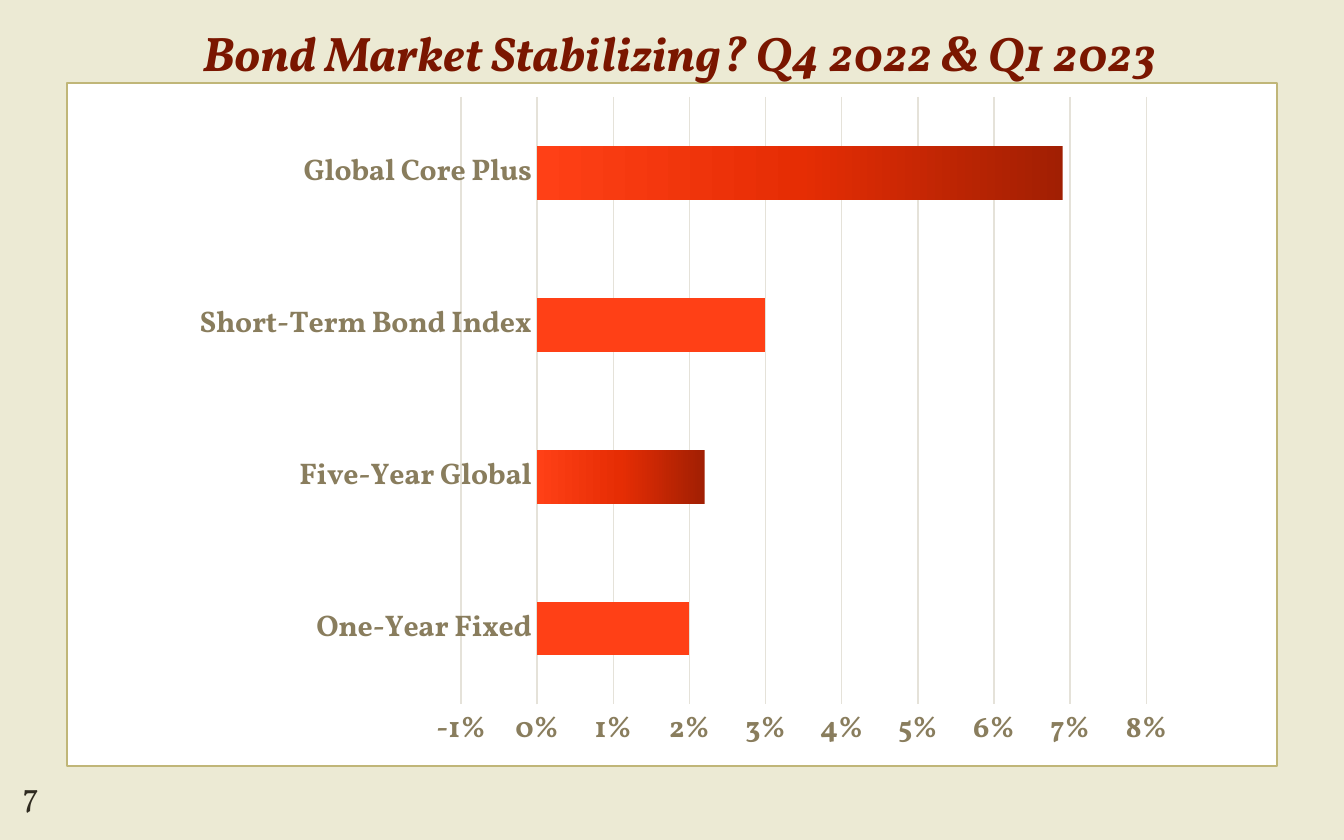
import pptx
import pptx.chart.data
import pptx.dml.color
import pptx.enum.chart
import pptx.enum.shapes
import pptx.enum.text
import pptx.oxml
import pptx.oxml.ns
import pptx.util
from pptx.util import Inches

FONT = "Vollkorn"
COLORS = {
    "background": "ECEAD4", "panel": "FFFFFF", "border": "C0B678",
    "title": "7A1600", "text": "2F2B20", "label": "897D5D", "grid": "E5E2D9",
    "bar": "FF4016", "bar_mid": "E62D04", "bar_dark": "A11F03",
}
RETURNS = {
    "One-Year Fixed": 0.02,
    "Five-Year Global": 0.022,
    "Short-Term Bond Index": 0.03,
    "Global Core Plus": 0.069,
}
GRADIENT_BARS = (1, 3)
GRADIENT = ((0, "bar_dark"), (50, "bar_mid"), (100, "bar"))
PLOT_AREA = {"x": 0.28, "y": 0.02, "w": 0.68, "h": 0.89}


def rgb(name):
    return pptx.dml.color.RGBColor.from_string(COLORS[name])


def set_attrs(obj, values):
    for name, value in values.items():
        setattr(obj, name, value)


def set_font(font, size, color, **style):
    set_attrs(font, {"name": FONT, "size": pptx.util.Pt(size), **style})
    font.color.rgb = rgb(color)


def set_line(line, color, width):
    line.color.rgb = rgb(color)
    line.width = pptx.util.Pt(width)


def add_panel(s):
    sp = s.shapes.add_shape(pptx.enum.shapes.MSO_SHAPE.RECTANGLE,
                            Inches(0.5), Inches(0.62), Inches(9), Inches(5.08))
    sp.shadow.inherit = False
    sp.fill.solid()
    sp.fill.fore_color.rgb = rgb("panel")
    set_line(sp.line, "border", 1)


def add_text(s, box, text, size, color, **style):
    tf = s.shapes.add_textbox(*map(Inches, box)).text_frame
    tf.word_wrap = True
    p = tf.paragraphs[0]
    r = p.add_run()
    r.text = text
    set_font(r.font, size, color, **style)
    return p


def set_plot_area(chart):
    """Fix the inner plot area as fractions of the chart."""
    area = chart.element.xpath("c:chart/c:plotArea")[0]
    for old in area.xpath("c:layout"):
        area.remove(old)
    places = "".join(f'<c:{k} val="{v}"/>' for k, v in PLOT_AREA.items())
    area.insert(0, pptx.oxml.parse_xml(
        f'<c:layout {pptx.oxml.ns.nsdecls("c")}><c:manualLayout>'
        '<c:layoutTarget val="inner"/><c:xMode val="edge"/><c:yMode val="edge"/>'
        f'{places}</c:manualLayout></c:layout>'))


def format_axes(chart):
    none = pptx.enum.chart.XL_TICK_MARK.NONE
    for axis in (chart.category_axis, chart.value_axis):
        set_attrs(axis, {"major_tick_mark": none, "minor_tick_mark": none})
        set_font(axis.tick_labels.font, 16, "label", bold=True)
    set_line(chart.category_axis.format.line, "grid", 0.75)

    axis = chart.value_axis
    set_attrs(axis, {"minimum_scale": -0.01, "maximum_scale": 0.08,
                     "major_unit": 0.01, "has_major_gridlines": True})
    set_attrs(axis.tick_labels, {"number_format": "0%",
                                 "number_format_is_linked": False})
    axis.format.line.fill.background()
    set_line(axis.major_gridlines.format.line, "grid", 0.75)


def color_bars(chart):
    series = chart.plots[0].series[0]
    series.invert_if_negative = False
    series.format.fill.solid()
    series.format.fill.fore_color.rgb = rgb("title")
    for i in range(len(RETURNS)):
        fill = series.points[i].format.fill
        if i in GRADIENT_BARS:
            fill.gradient()
            fill.gradient_angle = 180
        else:
            fill.solid()
            fill.fore_color.rgb = rgb("bar")
    stops = "".join(f'<a:gs pos="{pos * 1000}"><a:srgbClr val="{COLORS[c]}"/></a:gs>'
                    for pos, c in GRADIENT)
    for old in chart.element.xpath(".//a:gsLst"):
        old.getparent().replace(old, pptx.oxml.parse_xml(
            f'<a:gsLst {pptx.oxml.ns.nsdecls("a")}>{stops}</a:gsLst>'))


def add_returns_chart(s):
    data = pptx.chart.data.CategoryChartData(number_format="0.0%")
    data.categories = list(RETURNS)
    data.add_series("Series 1", list(RETURNS.values()))
    chart = s.shapes.add_chart(pptx.enum.chart.XL_CHART_TYPE.BAR_CLUSTERED,
                               Inches(1.33), Inches(0.62), Inches(7.5), Inches(5.08),
                               data).chart
    set_attrs(chart, {"has_title": False, "has_legend": False})
    set_font(chart.font, 10, "text")
    set_attrs(chart.plots[0], {"gap_width": 182, "vary_by_categories": False})
    set_plot_area(chart)
    format_axes(chart)
    color_bars(chart)


def main():
    prs = pptx.Presentation()
    set_attrs(prs, {"slide_width": Inches(10), "slide_height": Inches(6.25)})
    s = prs.slides.add_slide(prs.slide_layouts[6])
    s.background.fill.solid()
    s.background.fill.fore_color.rgb = rgb("background")

    add_panel(s)
    p = add_text(s, (0, 0.12, 10, 0.83), "Bond Market Stabilizing? Q4 2022 & Q1 2023",
                 26, "title", bold=True, italic=True)
    p.alignment = pptx.enum.text.PP_ALIGN.CENTER
    p._p.get_or_add_pPr().set("marL", str(Inches(0.12)))
    add_returns_chart(s)
    add_text(s, (0.07, 5.71, 0.42, 0.42), "7", 18, "text")
    prs.save("out.pptx")


if __name__ == "__main__":
    main()
